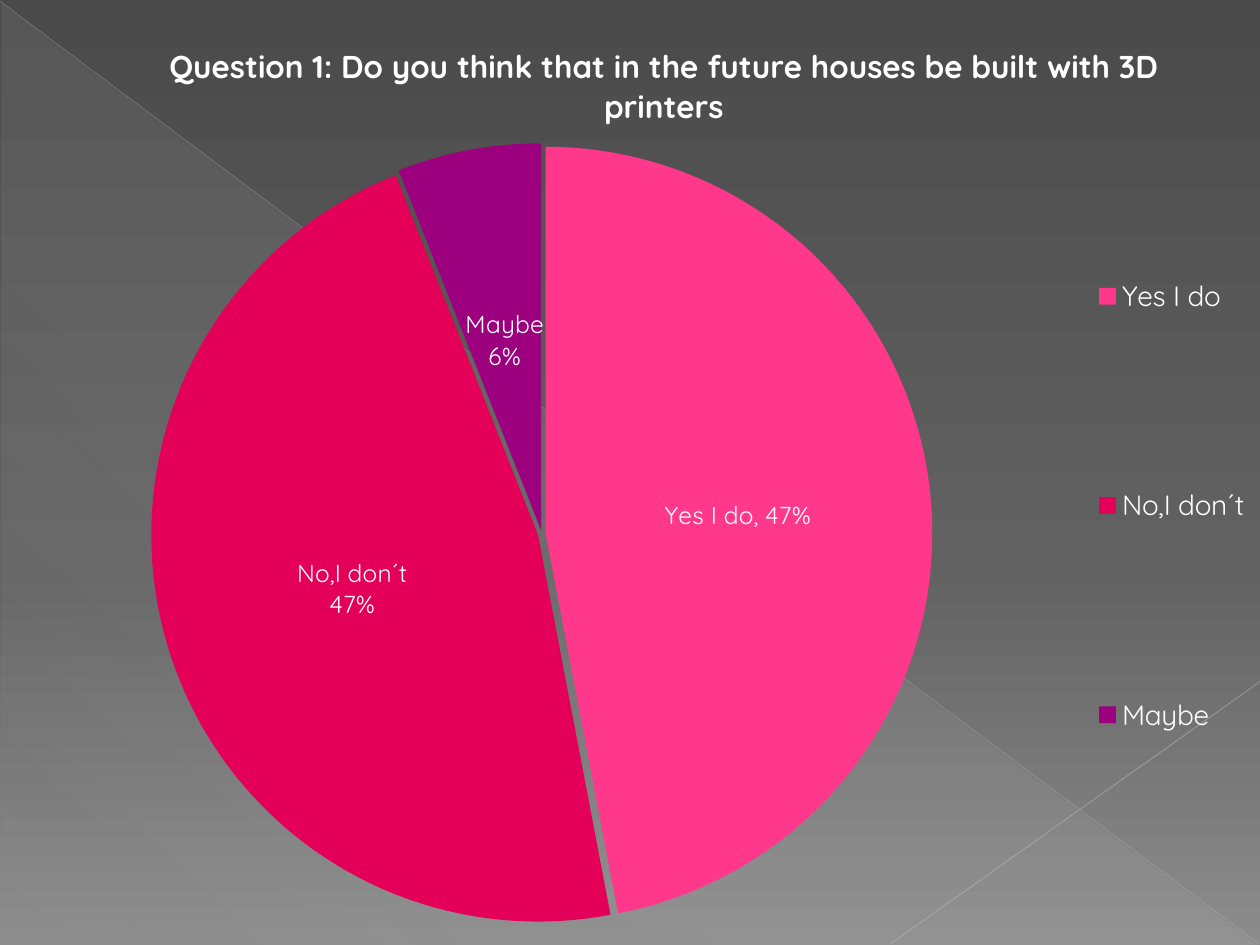
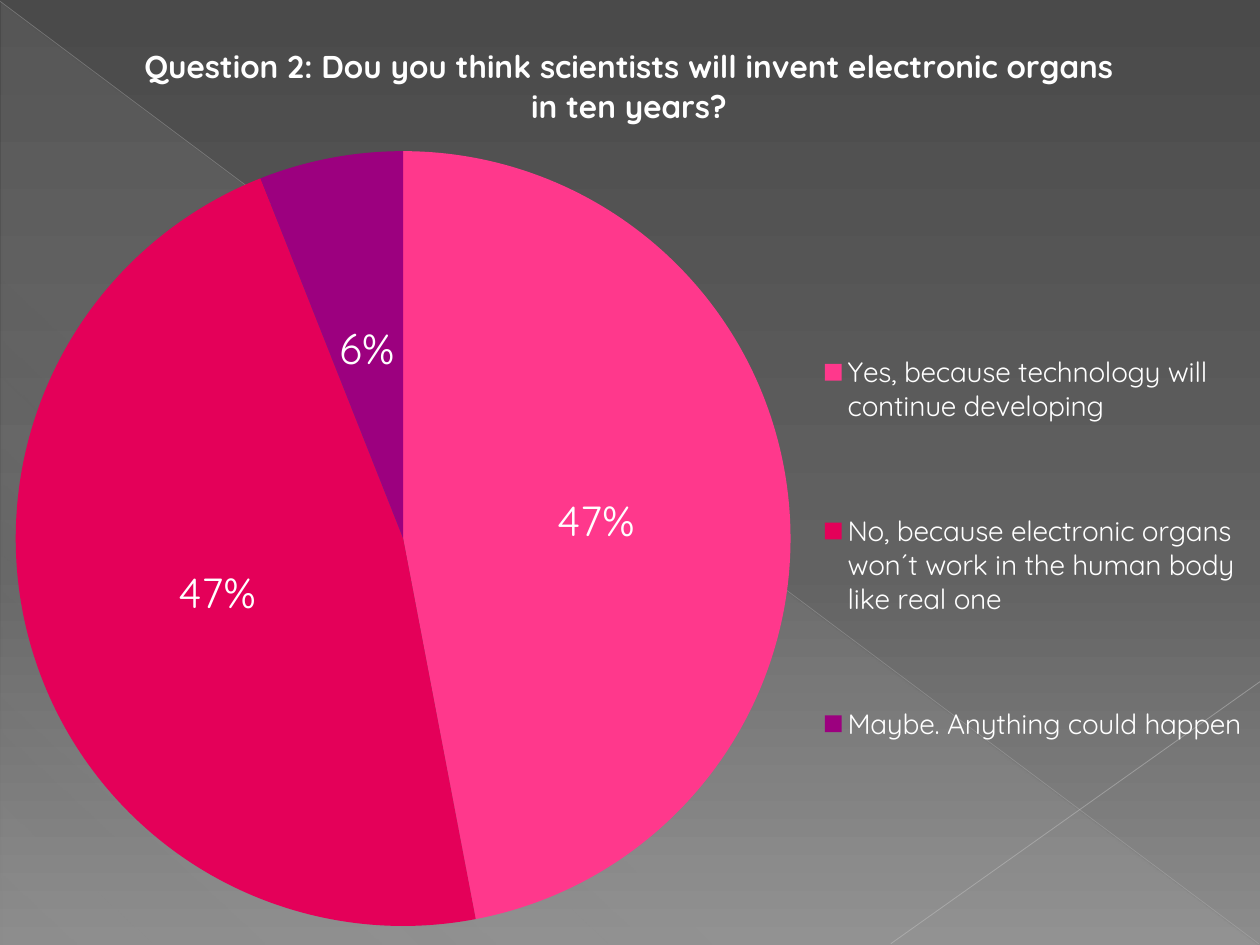
from lxml.etree import SubElement, Element
from pptx import Presentation
from pptx.chart.data import CategoryChartData
from pptx.dml.color import RGBColor
from pptx.enum.chart import XL_CHART_TYPE, XL_LABEL_POSITION, XL_LEGEND_POSITION
from pptx.enum.shapes import MSO_CONNECTOR, MSO_SHAPE
from pptx.oxml.ns import qn
from pptx.util import Inches, Pt

# Content: layouts are left, top (, width, height) as fractions of the slide
QUESTIONS = [
    dict(title="Question 1: Do you think that in the future houses be built with 3D printers",
         answers=["Yes I do", "No,I don´t", "Maybe"], shares=[47, 47, 6],
         title_at=(0.13, 0.04), pie_at=(0.12, 0.15, 0.62, 0.83),
         legend_at=(0.86, 0.11, 0.14, 0.85),
         label_size=14, named_labels=True, explosion=1),
    dict(title="Question 2: Dou you think scientists will invent electronic organs in ten years?",
         answers=["Yes, because technology will continue developing",
                  "No, because electronic organs won´t work in the human body like real one",
                  "Maybe. Anything could happen"], shares=[47, 47, 6],
         title_at=(0.11, 0.04), pie_at=(0.01, 0.16, 0.62, 0.82),
         legend_at=(0.64, 0.28, 0.36, 0.6),
         label_size=24, named_labels=False, explosion=0),
]

# Shared look
FONT = "Quicksand"
WHITE = RGBColor(0xFF, 0xFF, 0xFF)
SLICE_COLORS = [RGBColor(0xFF, 0x38, 0x8C), RGBColor(0xE4, 0x00, 0x59), RGBColor(0x9C, 0x00, 0x7F)]
DARK, MIDDLE, LIGHT = (RGBColor(0x4A, 0x4A, 0x4A), RGBColor(0x62, 0x62, 0x62),
                       RGBColor(0x8C, 0x8C, 0x8C))
VEIL = RGBColor(0xD2, 0xD2, 0xD2)
# Stops are position %, colour, opacity %
BACKDROP = [(0, DARK, 100), (60, MIDDLE, 100), (100, LIGHT, 100)]
VEIL_STOPS = [(0, VEIL, 10), (70, VEIL, 8), (100, VEIL, 1)]
# Lines are start, end, colour, width, opacity %
DIAGONALS = [((0, 0.01), (9.99, 7.49), RGBColor(0xBF, 0xBF, 0xBF), 0.39, 35),
             ((10, 5.41), (7.07, 7.49), RGBColor(0xC6, 0xC6, 0xC6), 0.47, 45)]


def add_alpha(color, opacity):
    SubElement(color, qn("a:alpha"), val=str(opacity * 1000))


def set_gradient(fill, owner, stops, angle):
    fill.gradient()
    gradient = owner.find(".//" + qn("a:gradFill"))
    for child in list(gradient):
        gradient.remove(child)
    stop_list = SubElement(gradient, qn("a:gsLst"))
    for position, color, opacity in stops:
        stop = SubElement(stop_list, qn("a:gs"), pos=str(position * 1000))
        add_alpha(SubElement(stop, qn("a:srgbClr"), val=str(color)), opacity)
    SubElement(gradient, qn("a:lin"), ang=str(angle * 60000), scaled="0")


def add_backdrop(slide):
    set_gradient(slide.background.fill, slide._element, BACKDROP, 90)
    veil = slide.shapes.add_shape(MSO_SHAPE.RIGHT_TRIANGLE, Inches(0.01), Inches(0.02),
                                  Inches(9.98), Inches(7.48))
    veil.shadow.inherit = False
    veil.line.fill.background()
    set_gradient(veil.fill, veil._element, VEIL_STOPS, 133)
    for start, end, color, width, opacity in DIAGONALS:
        diagonal = slide.shapes.add_connector(MSO_CONNECTOR.STRAIGHT,
                                              *map(Inches, start + end))
        diagonal.line.color.rgb = color
        diagonal.line.width = Pt(width)
        properties = diagonal._element.spPr
        add_alpha(properties.find(".//" + qn("a:srgbClr")), opacity)
        SubElement(properties, qn("a:effectLst"))


def place(part, index, fractions, inner=False):
    """Give a chart part a manual layout, as child number index."""
    for old in part.findall(qn("c:layout")):
        part.remove(old)
    layout = Element(qn("c:layout"))
    manual = SubElement(layout, qn("c:manualLayout"))
    if inner:
        SubElement(manual, qn("c:layoutTarget"), val="inner")
    for key in "xy":
        SubElement(manual, qn(f"c:{key}Mode"), val="edge")
    for key, value in zip("xywh", fractions):
        SubElement(manual, qn(f"c:{key}"), val=str(value))
    part.insert(index, layout)


def set_separator(labels, text):
    separator = Element(qn("c:separator"))
    separator.text = text
    labels.find(qn("c:showBubbleSize")).addnext(separator)


def style_font(font, size, bold=False):
    font.name, font.size, font.bold = FONT, Pt(size), bold
    font.color.rgb = WHITE


def label_slices(series, question):
    labels = series.data_labels
    style_font(labels.font, question["label_size"])
    labels.show_value = False
    labels.show_percentage = True
    labels.show_category_name = question["named_labels"]
    labels.number_format, labels.number_format_is_linked = "0%", False
    labels.position = XL_LABEL_POSITION.CENTER
    if question["named_labels"]:
        # The first slice keeps its label on one line
        first = series.points[0].data_label
        style_font(first.font, question["label_size"])
        first.position = XL_LABEL_POSITION.CENTER
        first_label = labels._element.find(qn("c:dLbl"))
        for flag, shown in (("showVal", "0"), ("showCatName", "1"), ("showPercent", "1")):
            first_label.find(qn("c:" + flag)).set("val", shown)
        set_separator(first_label, ", ")
        set_separator(labels._element, "\n")


def add_pie(slide, size, question):
    data = CategoryChartData()
    data.categories = question["answers"]
    data.add_series(question["title"], question["shares"])
    chart = slide.shapes.add_chart(XL_CHART_TYPE.PIE, 0, 0, *size, data).chart
    style_font(chart.font, 10)

    # Title
    chart.has_title = True
    title = chart.chart_title
    title.include_in_layout = False
    run = title.text_frame.paragraphs[0].add_run()
    run.text = question["title"]
    style_font(run.font, 18, bold=True)
    place(title._element, 1, question["title_at"])

    # Legend
    chart.has_legend = True
    legend = chart.legend
    legend.position = XL_LEGEND_POSITION.RIGHT
    legend.include_in_layout = False
    style_font(legend.font, 16)
    place(legend._element, 1, question["legend_at"])

    # Slices
    plot = chart.plots[0]
    plot.vary_by_categories = True
    place(plot._element.getparent(), 0, question["pie_at"], inner=True)
    series = plot.series[0]
    for index, color in enumerate(SLICE_COLORS):
        slice_fill = series.points[index].format.fill
        slice_fill.solid()
        slice_fill.fore_color.rgb = color
    if question["explosion"]:
        explosion = Element(qn("c:explosion"), val=str(question["explosion"]))
        series._element.find(qn("c:tx")).addnext(explosion)
    label_slices(series, question)


def main():
    deck = Presentation()
    deck.slide_width, deck.slide_height = Inches(10), Inches(7.5)
    for question in QUESTIONS:
        slide = deck.slides.add_slide(deck.slide_layouts[6])
        add_backdrop(slide)
        add_pie(slide, (deck.slide_width, deck.slide_height), question)
    deck.save("out.pptx")


if __name__ == "__main__":
    main()
